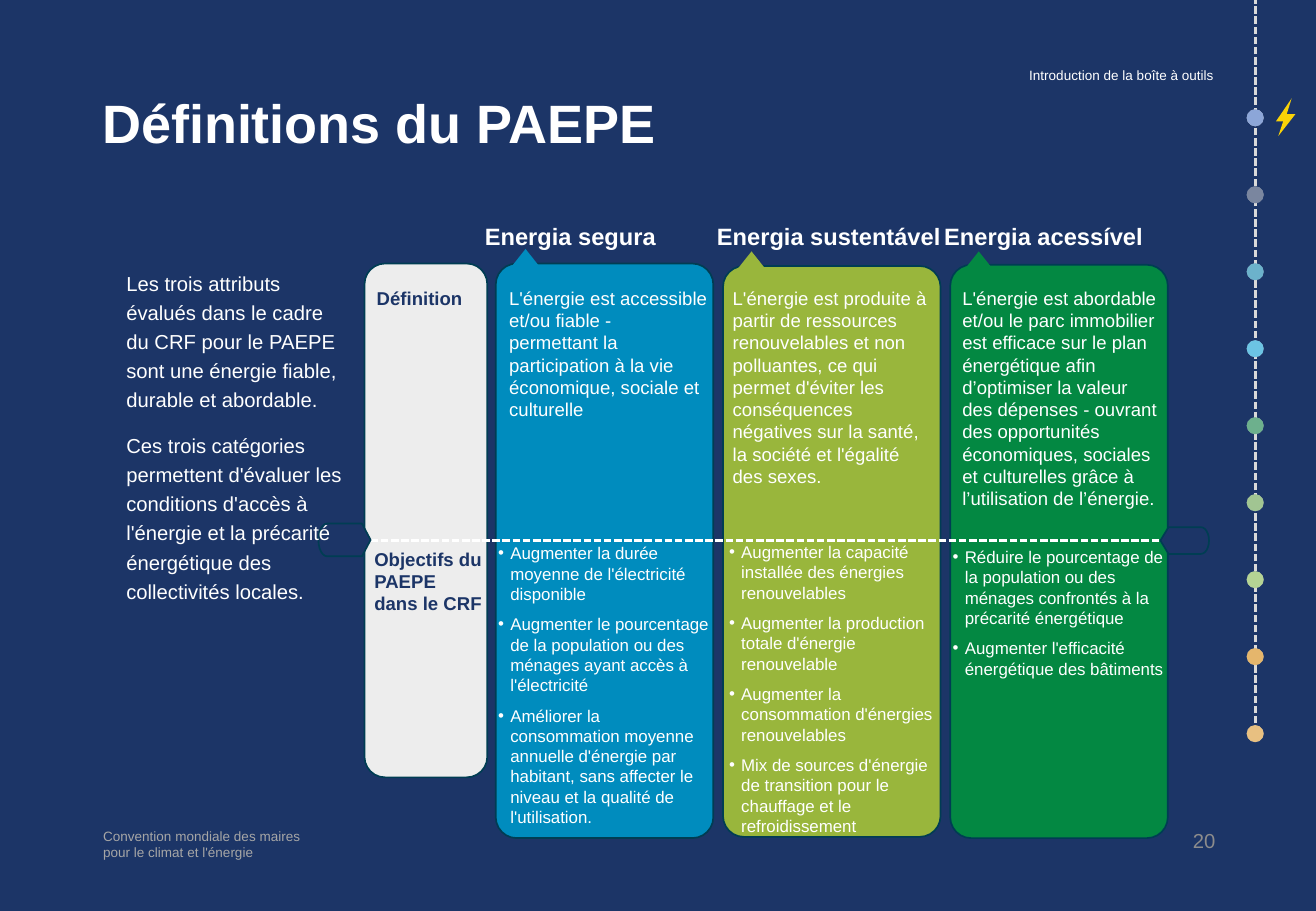
from copy import deepcopy
from dataclasses import dataclass

from lxml import etree
from pptx import Presentation
from pptx import util as u
from pptx.dml import color
from pptx.enum import dml, shapes, text
from pptx.oxml import ns

NAVY, WHITE, EDGE, GREY = "1C3567", "FFFFFF", "003D53", "D9D9D9"
KIND = shapes.MSO_SHAPE
RIGHT = text.PP_ALIGN.RIGHT
Box = tuple[float, float, float, float]


@dataclass
class Column:
    head: str
    fill: str
    top: float
    height: float
    tip: Box
    lead: Box
    about: str
    list_box: Box
    goals: list[str]


COLUMNS = [
    Column("Energia segura", "008CBE", 2.17, 4.73,
           (4.19, 2.05, 0.27, 0.17), (4.19, 2.36, 1.64, 1.45),
           "L'énergie est accessible et/ou fiable - \npermettant la participation "
           "à la vie économique, sociale et culturelle",
           (4.1, 4.47, 1.75, 1.79),
           ["Augmenter la durée moyenne de l'électricité disponible",
            "Augmenter le pourcentage de la population ou des ménages ayant accès "
            "à l'électricité",
            "Améliorer la consommation moyenne annuelle d'énergie par habitant, "
            "sans affecter le niveau et la qualité de l'utilisation."]),
    Column("Energia sustentável", "99B63C", 2.19, 4.7,
           (6.05, 2.07, 0.27, 0.17), (6.03, 2.36, 1.64, 1.45),
           "L'énergie est produite à partir de ressources renouvelables et non "
           "polluantes, ce qui permet d'éviter les conséquences négatives sur la "
           "santé, la société et l'égalité des sexes.",
           (6, 4.46, 1.75, 1.79),
           ["Augmenter la capacité installée des énergies renouvelables",
            "Augmenter la production totale d'énergie renouvelable",
            "Augmenter la consommation d'énergies renouvelables",
            "Mix de sources d'énergie de transition pour le chauffage et le "
            "refroidissement"]),
    Column("Energia acessível", "038842", 2.18, 4.72,
           (7.92, 2.07, 0.27, 0.17), (7.92, 2.36, 1.64, 1.45),
           "L'énergie est abordable et/ou le parc immobilier \nest efficace sur le "
           "plan énergétique afin d’optimiser la valeur des dépenses - ouvrant des "
           "opportunités économiques, sociales et culturelles grâce à "
           "l’utilisation de l’énergie.",
           (7.84, 4.5, 1.75, 1.79),
           ["Réduire le pourcentage de la population ou des ménages confrontés à "
            "la précarité énergétique",
            "Augmenter l'efficacité énergétique des bâtiments"]),
]
DOTS = ["4C78CE", NAVY, "008CBE", "00B0F0", "038842", "6AB24D", "92D050",
        "F19500", "F8A92A"]

deck = Presentation()
deck.slide_width, deck.slide_height = u.Inches(10.83), u.Inches(7.5)
slide = deck.slides.add_slide(deck.slide_layouts[3])


def paint(fill, tone: str) -> None:
    fill.solid()
    fill.fore_color.rgb = color.RGBColor.from_string(tone)


def write(box: Box, *paras: str, size: float, tone: str = WHITE, bold=False,
          inset=True, align=None, line=None, before=0, after=0, bullet=False,
          anchor=text.MSO_ANCHOR.TOP, holder=None):
    """Fill a placeholder, or a new text box, with formatted paragraphs."""
    spot = [u.Inches(n) for n in box]
    shape = holder or slide.shapes.add_textbox(*spot)
    shape.left, shape.top, shape.width, shape.height = spot
    frame = shape.text_frame
    frame.word_wrap = True
    frame.auto_size = text.MSO_AUTO_SIZE.NONE
    frame.vertical_anchor = anchor
    side, end = (0.1, 0.05) if inset else (0, 0)
    frame.margin_left = frame.margin_right = u.Inches(side)
    frame.margin_top = frame.margin_bottom = u.Inches(end)
    for i, words in enumerate(paras):
        para = frame.paragraphs[0] if i == 0 else frame.add_paragraph()
        para.text = words
        para.alignment = align or text.PP_ALIGN.LEFT
        para.line_spacing = line or 1.0
        para.space_before = u.Pt(before if i else 0)
        para.space_after = u.Pt(after)
        props = para._p.get_or_add_pPr()
        indent = u.Inches(0.1) if bullet else 0
        props.set("marL", str(indent))
        props.set("indent", str(-indent))
        if bullet:
            etree.SubElement(props, ns.qn("a:buFont")).set("typeface", "Arial")
            etree.SubElement(props, ns.qn("a:buChar")).set("char", "•")
        else:
            etree.SubElement(props, ns.qn("a:buNone"))
        for run in para.runs:
            run.font.name, run.font.size, run.font.bold = "Arial", u.Pt(size), bold
            paint(run.font.fill, tone)
        for gap in para._p.findall(ns.qn("a:br")):
            gap.append(deepcopy(para.runs[0]._r.rPr))
    return shape


def draw(kind, box: Box, tone: str, edge: str = "", alpha: int = 100):
    shape = slide.shapes.add_shape(kind, *[u.Inches(n) for n in box])
    return dress(shape, tone, edge, alpha)


def dress(shape, tone: str, edge: str = "", alpha: int = 100):
    shape.shadow.inherit = False
    paint(shape.fill, tone)
    if alpha < 100:
        hue = shape._element.spPr.find(".//" + ns.qn("a:srgbClr"))
        etree.SubElement(hue, ns.qn("a:alpha")).set("val", str(alpha * 1000))
    if edge:
        paint(shape.line.fill, edge)
        shape.line.width = u.Pt(1)
    else:
        shape.line.fill.background()
    return shape


def dash(x1: float, y1: float, x2: float, y2: float, tone: str) -> None:
    rule = slide.shapes.add_connector(
        shapes.MSO_CONNECTOR.STRAIGHT, *[u.Inches(n) for n in (x1, y1, x2, y2)])
    paint(rule.line.fill, tone)
    rule.line.width = u.Pt(1.5)
    rule.line.dash_style = dml.MSO_LINE.SQUARE_DOT
    etree.SubElement(rule._element.spPr, ns.qn("a:effectLst"))


def bolt(points: list[tuple[float, float]]) -> None:
    spots = [(u.Inches(x), u.Inches(y)) for x, y in points]
    pen = slide.shapes.build_freeform(*spots[0])
    pen.add_line_segments(spots[1:], close=True)
    dress(pen.convert_to_shape(), "FAD307")


# Background, title and labels
paint(slide.background.fill, NAVY)
title, side, label = slide.placeholders
write((0.74, 0.75, 8.97, 0.7), "Définitions du PAEPE", size=32, bold=True,
      line=0.9, holder=title)
write((6.67, 0.5, 3.42, 0.24), "Introduction de la boîte à outils", size=8,
      align=RIGHT, line=0.9, anchor=text.MSO_ANCHOR.BOTTOM, holder=label)
write((0.75, 6.77, 1.83, 0.4),
      "Convention mondiale des maires\npour le climat et l'énergie",
      size=8, tone="A6A6A6")
write((9.58, 6.77, 0.52, 0.4), "20", size=12, tone="8C8C8C", align=RIGHT)

# Row heads
draw(KIND.ROUNDED_RECTANGLE, (3, 2.17, 1.01, 4.23), "EDEDED", EDGE)
for x, y, words in [(3.1, 2.36, "Définition"),
                    (3.08, 4.51, "Objectifs du PAEPE dans le CRF")]:
    write((x, y, 0.89, 0.27), words, size=11, tone=NAVY, bold=True,
          inset=False, after=9)

# Columns
for i, col in enumerate(COLUMNS):
    left = 4.08 + 1.87 * i
    card = draw(KIND.ROUNDED_RECTANGLE, (left, col.top, 1.79, col.height),
                col.fill, EDGE)
    card.adjustments[0] = 0.096
    draw(KIND.ISOSCELES_TRIANGLE, col.tip, col.fill)
    write((left - 0.05 - 0.04 * (i == 0), 1.83, 2.18 if i else 1.91, 0.27),
          col.head, size=14, bold=True, inset=False, after=9)
    write(col.lead, col.about, size=11, inset=False, after=9)
    write(col.list_box, *col.goals, size=10, inset=False, after=6, bullet=True)

# Divider with its end notches
dash(3.05, 4.45, 9.63, 4.45, WHITE)
draw(KIND.FLOWCHART_DISPLAY, (9.55, 4.34, 0.4, 0.22), NAVY, EDGE)
notch = draw(KIND.FLOWCHART_DISPLAY, (2.62, 4.31, 0.43, 0.27), NAVY, EDGE)
notch.rotation = 180

# Side text, above the notch
slide.shapes._spTree.append(side._element)
write((0.94, 2.14, 2, 4.03),
      "Les trois attributs évalués dans le cadre du CRF pour le PAEPE sont une "
      "énergie fiable, durable et abordable.",
      "Ces trois catégories permettent d'évaluer les conditions d'accès à "
      "l'énergie et la précarité énergétique des collectivités locales.",
      size=12, line=1.2, before=10, holder=side)

# Progress track
dash(10.33, 6.04, 10.33, 0, GREY)
for i, tone in enumerate(DOTS):
    spot = (10.26, 0.9 + 5.07 / 8 * i, 0.14, 0.14)
    draw(KIND.OVAL, spot, GREY)
    if i == 0:
        draw(KIND.OVAL, spot, "C3D2EF", alpha=50)
    draw(KIND.OVAL, spot, tone, alpha=50)
bolt([(10.57, 1), (10.5, 1), (10.63, 0.81), (10.58, 0.97)])
bolt([(10.58, 0.94), (10.66, 0.94), (10.52, 1.12), (10.57, 0.97)])

deck.save("out.pptx")
